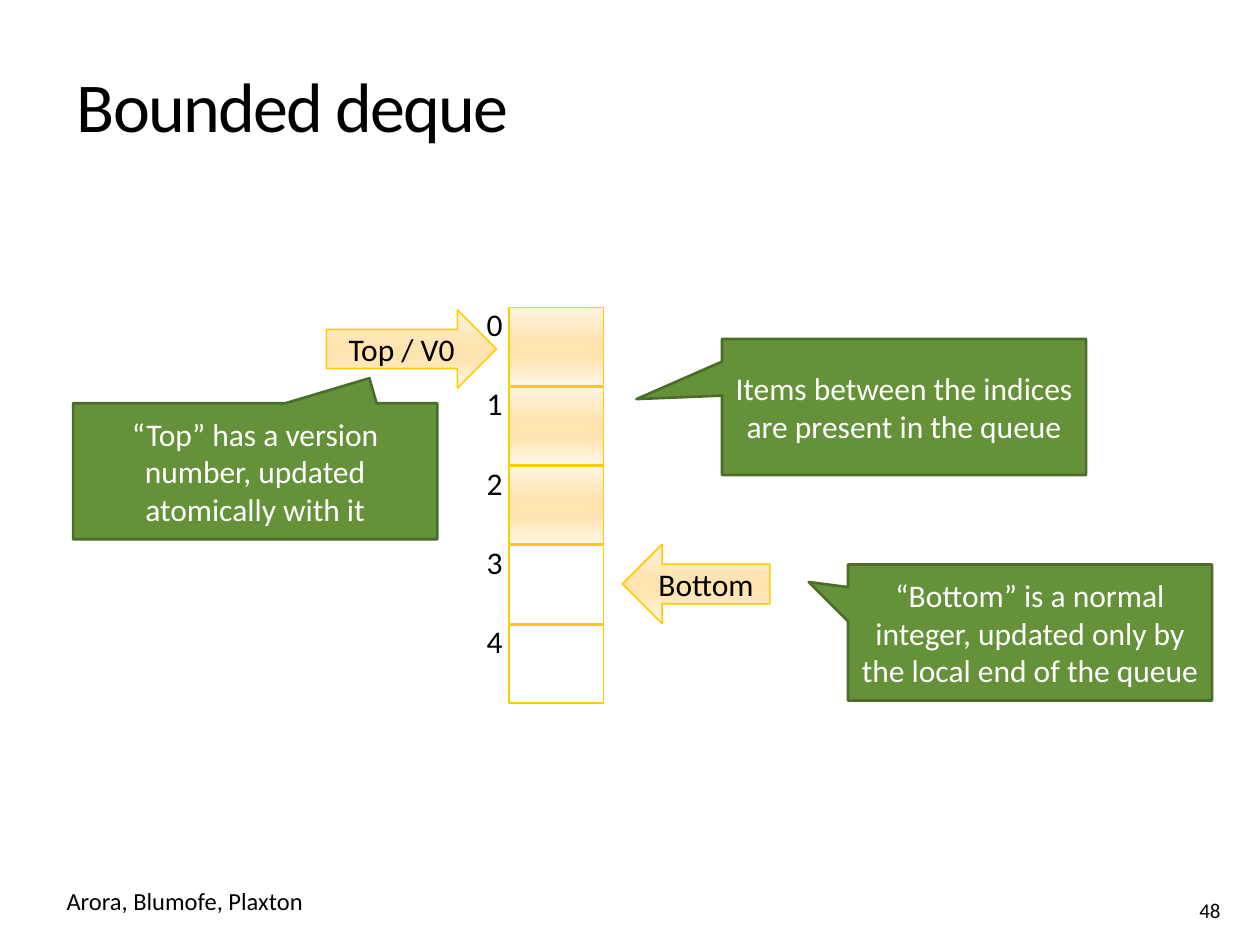
import pptx
import pptx.util
import pptx.dml.color
import pptx.enum.shapes
import pptx.enum.text
import pptx.oxml
import pptx.oxml.ns

Inches = pptx.util.Inches
Pt = pptx.util.Pt
RGBColor = pptx.dml.color.RGBColor
Kind = pptx.enum.shapes.MSO_SHAPE
Anchor = pptx.enum.text.MSO_ANCHOR
Align = pptx.enum.text.PP_ALIGN
qn = pptx.oxml.ns.qn

BLACK = RGBColor(0, 0, 0)
WHITE = RGBColor(255, 255, 255)
GOLD = RGBColor(0xFF, 0xCC, 0x00)
GREEN = RGBColor(0x65, 0x92, 0x39)
MOSS = RGBColor(0x4B, 0x6C, 0x2A)
FONT = "Calibri"

STOPS = [(0, "FFF4E1"), (40, "FFE5B4"), (50, "FFE3AD"), (65, "FFE5B4"), (100, "FFF6E7")]
TITLE = "Bounded deque"
SLOTS = [("0", True), ("1", True), ("2", True), ("3", False), ("4", False)]
ARROWS = [
    ("Top / V0", Kind.RIGHT_ARROW, (2.59, 2.46, 1.35, 0.62)),
    ("Bottom", Kind.LEFT_ARROW, (4.94, 4.32, 1.17, 0.63)),
]
NOTES = [
    ("“Bottom” is a normal integer, updated only by the local end of the queue",
     (6.73, 4.48), (-0.608, -0.371)),
    ("Items between the indices are present in the queue", (5.73, 2.69), (-0.735, -0.058)),
    ("“Top” has a version number, updated atomically with it", (0.58, 3.2), (0.314, -0.684)),
]
CELL = (0.75, 0.62)
PITCH = 0.63
NOTE = (2.89, 1.08)


def write(shape, text, size=18, color=BLACK, align=Align.CENTER, anchor=Anchor.MIDDLE, wrap=True):
    frame = shape.text_frame
    frame.text = text
    frame.word_wrap = wrap
    frame.vertical_anchor = anchor
    par = frame.paragraphs[0]
    par.alignment = align
    font = par.runs[0].font
    font.name, font.size, font.color.rgb = FONT, Pt(size), color


def label(slide, box, text, **style):
    shape = slide.shapes.add_textbox(*map(Inches, box))
    write(shape, text, **style)
    return shape


def draw(slide, kind, box, edge, width):
    shape = slide.shapes.add_shape(kind, *map(Inches, box))
    shape.shadow.inherit = False
    shape.line.color.rgb = edge
    shape.line.width = Pt(width)
    return shape


def blend(shape):
    shape.fill.gradient()
    shape.fill.gradient_angle = 270
    stops = shape._element.spPr.find(qn("a:gradFill")).find(qn("a:gsLst"))
    for old in list(stops):
        stops.remove(old)
    for pos, color in STOPS:
        stops.append(pptx.oxml.parse_xml(
            f'<a:gs {pptx.oxml.ns.nsdecls("a")} pos="{pos * 1000}">'
            f'<a:srgbClr val="{color}"/></a:gs>'))


def main():
    deck = pptx.Presentation()
    deck.slide_width, deck.slide_height = Inches(10), Inches(7.5)
    slide = deck.slides.add_slide(deck.slide_layouts[5])

    title = slide.shapes.title
    title.left, title.top, title.width, title.height = map(Inches, (0.51, 0.56, 8.82, 0.83))
    write(title, TITLE, size=40, align=Align.LEFT, anchor=Anchor.TOP)
    head = title.text_frame.paragraphs[0]
    head.line_spacing = Pt(40)
    head.runs[0].font._element.set("spc", "-100")

    for row, (name, full) in enumerate(SLOTS):
        label(slide, (3.55, 2.26 + row * PITCH, *CELL), name)
        cell = draw(slide, Kind.RECTANGLE, (4.04, 2.44 + row * PITCH, *CELL), GOLD, 0.94)
        if full:
            blend(cell)
        else:
            cell.fill.background()

    for text, kind, box in ARROWS:
        arrow = draw(slide, kind, box, GOLD, 0.94)
        blend(arrow)
        write(arrow, text)

    for text, spot, tip in NOTES:
        note = draw(slide, Kind.RECTANGULAR_CALLOUT, (*spot, *NOTE), MOSS, 1.5)
        note.adjustments[0], note.adjustments[1] = tip
        note.fill.solid()
        note.fill.fore_color.rgb = GREEN
        write(note, text, color=WHITE)

    label(slide, (9.42, 6.97, 0.5, 0.4), "48", size=12, align=Align.LEFT, anchor=Anchor.BOTTOM)
    credit = label(slide, (0.43, 6.98, 2.16, 0.34), "Arora, Blumofe, Plaxton",
                   size=14, align=Align.LEFT, anchor=Anchor.TOP, wrap=False)
    credit.text_frame.auto_size = pptx.enum.text.MSO_AUTO_SIZE.SHAPE_TO_FIT_TEXT

    deck.save("out.pptx")


if __name__ == "__main__":
    main()
